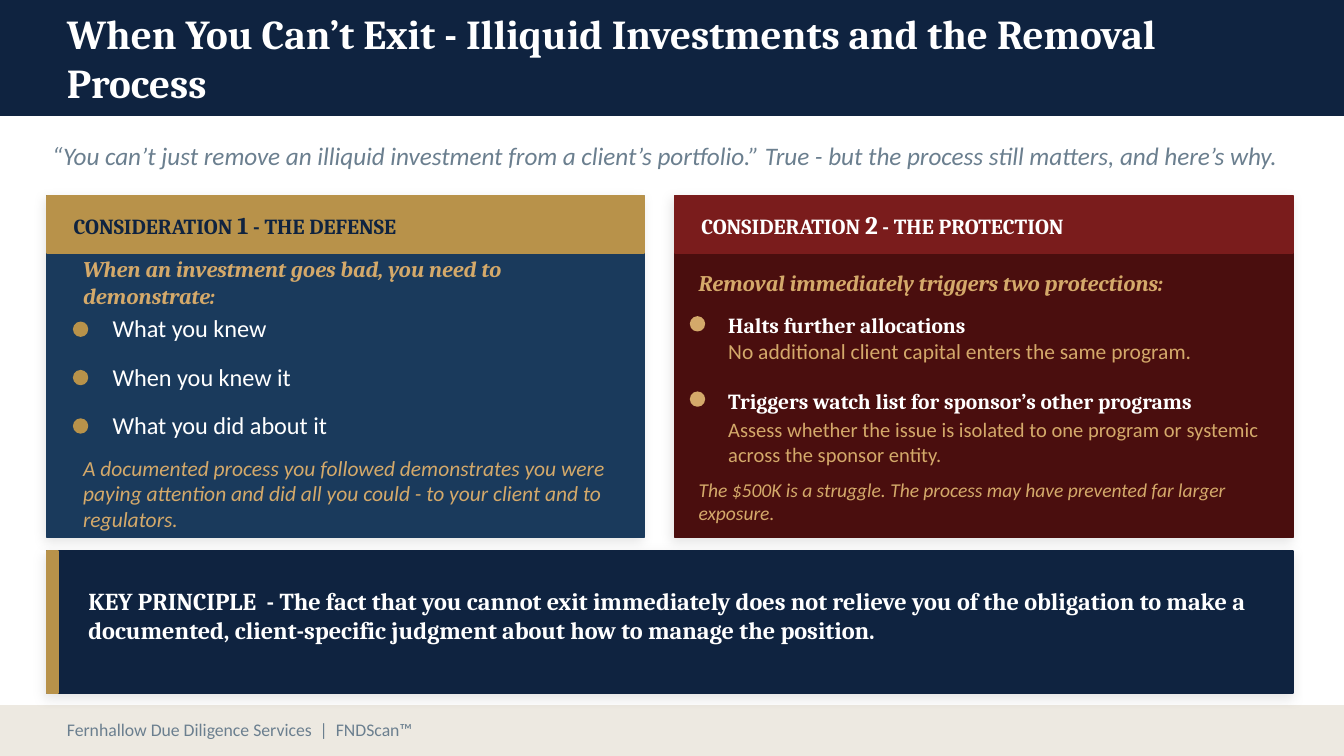
import pptx
import pptx.dml.color
import pptx.enum.shapes
import pptx.enum.text
import pptx.oxml
import pptx.oxml.ns
import pptx.util
from dataclasses import dataclass

Inches = pptx.util.Inches
RECT = pptx.enum.shapes.MSO_SHAPE.RECTANGLE
DOT = pptx.enum.shapes.MSO_SHAPE.OVAL


@dataclass(frozen=True)
class Theme:
    navy: str = "0F2340"
    blue: str = "1A3A5C"
    gold: str = "B8924A"
    tan: str = "D4A96A"
    maroon: str = "4A0E0E"
    red: str = "7A1C1C"
    sand: str = "EDE9E1"
    slate: str = "6B7F8F"
    white: str = "FFFFFF"
    serif: str = "Cambria"
    sans: str = "Calibri"
    title: float = 22
    quote: float = 13.5
    large: float = 13
    lead: float = 12
    body: float = 11.5
    detail: float = 11
    small: float = 10.5
    footer: float = 9.5


theme = Theme()
deck = pptx.Presentation()
deck.slide_width, deck.slide_height = Inches(10), Inches(5.625)
slide = deck.slides.add_slide(deck.slide_layouts[6])


def block(left, top, width, height, color, kind=RECT, shadow=False):
    shape = slide.shapes.add_shape(kind, Inches(left), Inches(top), Inches(width), Inches(height))
    shape.shadow.inherit = False
    shape.fill.solid()
    shape.fill.fore_color.rgb = pptx.dml.color.RGBColor.from_string(color)
    shape.line.color.rgb = shape.fill.fore_color.rgb
    shape.line.width = pptx.util.Pt(1)
    if shadow:
        effects = shape._element.spPr.find(pptx.oxml.ns.qn("a:effectLst"))
        effects.append(pptx.oxml.parse_xml(
            f'<a:outerShdw {pptx.oxml.ns.nsdecls("a")} blurRad="76200" dist="25400" dir="8100000" '
            'algn="bl" rotWithShape="0"><a:srgbClr val="000000"><a:alpha val="10000"/>'
            '</a:srgbClr></a:outerShdw>'))


def write(left, top, width, height, runs, font, size, color, bold=False, italic=False):
    frame = slide.shapes.add_textbox(Inches(left), Inches(top), Inches(width), Inches(height)).text_frame
    frame.word_wrap = True
    frame.vertical_anchor = pptx.enum.text.MSO_ANCHOR.MIDDLE
    paragraph = frame.paragraphs[0]
    for words, run_size in runs if isinstance(runs, list) else [(runs, None)]:
        run = paragraph.add_run()
        run.text = words
        if run_size:
            run.font.size = pptx.util.Pt(run_size)
    paragraph.font.name = font
    paragraph.font.size = pptx.util.Pt(size)
    paragraph.font.bold = bold
    paragraph.font.italic = italic
    paragraph.font.color.rgb = pptx.dml.color.RGBColor.from_string(color)


block(0, 0, 10, 0.86, theme.navy)
write(0.4, 0, 9.2, 0.86, "When You Can’t Exit - Illiquid Investments and the Removal Process",
      theme.serif, theme.title, theme.white, bold=True)
block(0, 5.25, 10, 0.38, theme.sand)
write(0.4, 5.27, 9, 0.32, "Fernhallow Due Diligence Services  |  FNDScan™",
      theme.sans, theme.footer, theme.slate)
write(0.29, 0.94, 9.42, 0.44,
      "“You can’t just remove an illiquid investment from a client’s portfolio.” "
      "True - but the process still matters, and here’s why.",
      theme.sans, theme.quote, theme.slate, italic=True)

considerations = [
    (0.35, 4.44, theme.blue, theme.gold, theme.navy, "1", theme.large, " - THE DEFENSE",
     0.52, 4.18, "When an investment goes bad, you need to demonstrate:"),
    (5.02, 4.6, theme.maroon, theme.red, theme.white, "2", theme.quote, " - THE PROTECTION",
     5.1, 4.42, "Removal immediately triggers two protections:"),
]
for (left, width, fill, band, ink, number, number_size, heading,
     lead_left, lead_width, lead) in considerations:
    block(left, 1.46, width, 2.54, fill, shadow=True)
    block(left, 1.46, width, 0.42, band)
    write(left + 0.1, 1.46, width - 0.2, 0.42,
          [("CONSIDERATION ", None), (number, number_size), (heading, None)],
          theme.serif, theme.body, ink, bold=True)
    write(lead_left, 1.95, lead_width, 0.3, lead,
          theme.serif, theme.lead, theme.tan, bold=True, italic=True)

for row, question in enumerate(["What you knew", "When you knew it", "What you did about it"]):
    top = 2.28 + 0.36 * row
    block(0.55, top + 0.12, 0.1, 0.1, theme.gold, DOT)
    write(0.74, top, 3.9, 0.32, question, theme.sans, theme.large, theme.white)
write(0.52, 3.43, 4.18, 0.48,
      "A documented process you followed demonstrates you were paying attention "
      "and did all you could - to your client and to regulators.",
      theme.sans, theme.body, theme.tan, italic=True)

protections = [
    (2.29, "Halts further allocations", 2.48, 0.26, theme.body,
     "No additional client capital enters the same program."),
    (2.85, "Triggers watch list for sponsor’s other programs", 3.11, 0.36, theme.detail,
     "Assess whether the issue is isolated to one program or systemic across the sponsor entity."),
]
for top, protection, detail_top, detail_height, detail_size, detail in protections:
    block(5.14, top + 0.07, 0.1, 0.1, theme.tan, DOT)
    write(5.32, top, 4.2, 0.26, protection, theme.serif, theme.body, theme.white, bold=True)
    write(5.32, detail_top, 4.2, detail_height, detail, theme.sans, detail_size, theme.tan)
write(5.1, 3.55, 4.42, 0.36,
      "The $500K is a struggle. The process may have prevented far larger exposure.",
      theme.sans, theme.small, theme.tan, italic=True)

block(0.35, 4.1, 9.27, 1.06, theme.navy, shadow=True)
block(0.35, 4.1, 0.08, 1.06, theme.gold)
write(0.56, 4.14, 8.97, 0.88,
      "KEY PRINCIPLE  - The fact that you cannot exit immediately does not relieve you of the "
      "obligation to make a documented, client-specific judgment about how to manage the position.",
      theme.serif, theme.large, theme.white, bold=True)

deck.save("out.pptx")
